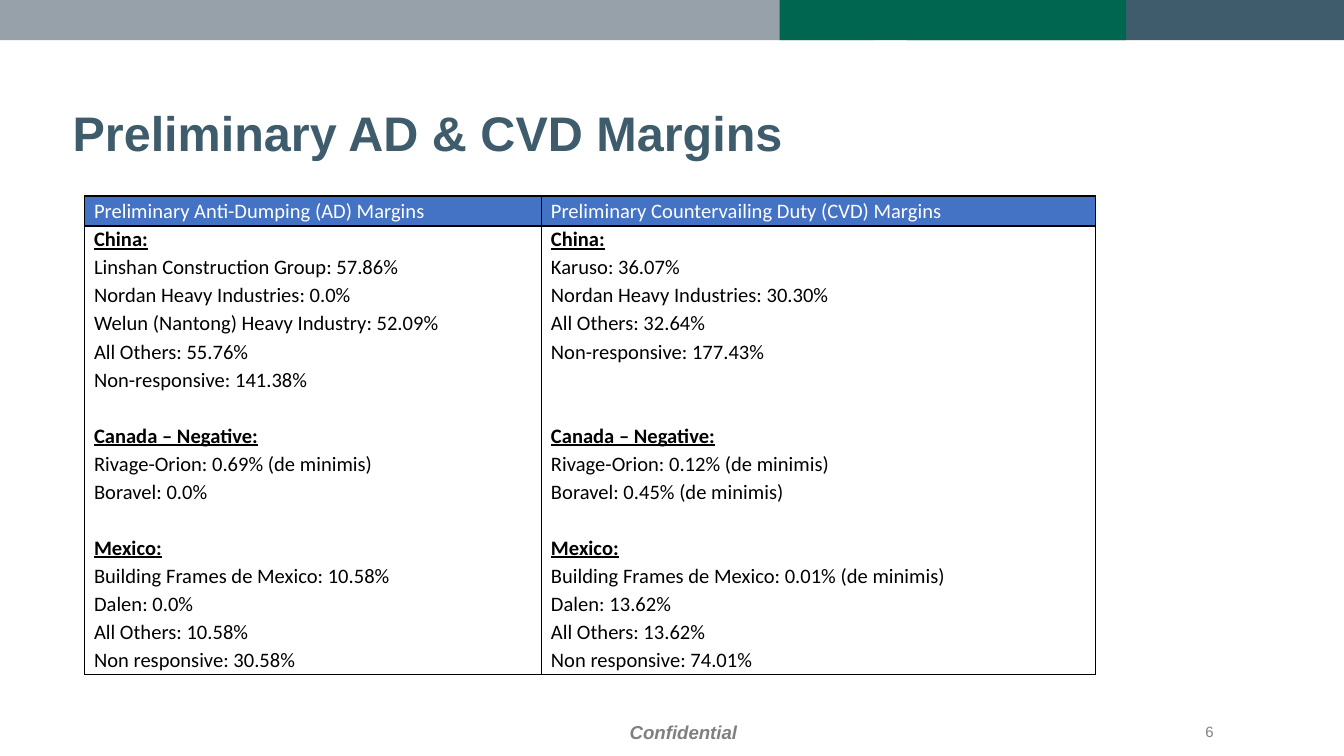
import itertools
import pptx
import pptx.util
import pptx.dml.color
import pptx.enum.shapes
import pptx.enum.text
import pptx.oxml
import pptx.oxml.ns

Inches, Pt = pptx.util.Inches, pptx.util.Pt
ALIGN, ANCHOR = pptx.enum.text.PP_ALIGN, pptx.enum.text.MSO_ANCHOR

TITLE = "Preliminary AD & CVD Margins"
HEADINGS = ("Preliminary Anti-Dumping (AD) Margins", "Preliminary Countervailing Duty (CVD) Margins")
COUNTRIES = [
    ("China:",
     ["Linshan Construction Group: 57.86%", "Nordan Heavy Industries: 0.0%",
      "Welun (Nantong) Heavy Industry: 52.09%", "All Others: 55.76%", "Non-responsive: 141.38%"],
     ["Karuso: 36.07%", "Nordan Heavy Industries: 30.30%", "All Others: 32.64%",
      "Non-responsive: 177.43%"]),
    ("Canada – Negative:",
     ["Rivage-Orion: 0.69% (de minimis)", "Boravel: 0.0%"],
     ["Rivage-Orion: 0.12% (de minimis)", "Boravel: 0.45% (de minimis)"]),
    ("Mexico:",
     ["Building Frames de Mexico: 10.58%", "Dalen: 0.0%", "All Others: 10.58%",
      "Non responsive: 30.58%"],
     ["Building Frames de Mexico: 0.01% (de minimis)", "Dalen: 13.62%", "All Others: 13.62%",
      "Non responsive: 74.01%"]),
]
BANDS = [(6.75, 3.25, "3F5C6C"), (0, 6.5, "97A1AA"), (5.8, 2.58, "00664F")]
FOOTERS = [
    ("6", (8.08, 5.31, 1, 0.27), ALIGN.RIGHT, {"size": Pt(8)}),
    ("Confidential", (2.25, 5.31, 5.67, 0.27), ALIGN.CENTER,
     {"size": Pt(10), "bold": True, "italic": True}),
]
SLIDE_WIDTH = 10
TABLE_BOX = (0.63, 1.46, 7.53, 3.56)
COLUMN_WIDTHS = (3.4, 4.12)
HEADING_HEIGHT = 0.22
BODY = {"name": "Calibri", "size": Pt(11)}
COUNTRY = {**BODY, "bold": True, "underline": True}


def paint(target, color):
    """Give a fill or a font a solid colour."""
    if hasattr(target, "solid"):
        target.solid()
        target.fore_color.rgb = pptx.dml.color.RGBColor.from_string(color)
    else:
        target.color.rgb = pptx.dml.color.RGBColor.from_string(color)


def write(paragraph, text, color, style):
    """Add one formatted run to a paragraph."""
    run = paragraph.add_run()
    run.text = text
    for key, value in style.items():
        setattr(run.font, key, value)
    paint(run.font, color)


def set_borders(cell, visible):
    """Draw the named cell sides as thin black lines and hide the others."""
    properties = cell._tc.get_or_add_tcPr()
    for index, side in enumerate("LRTB"):
        line = ('<a:solidFill><a:srgbClr val="000000"/></a:solidFill>'
                if side in visible else "<a:noFill/>")
        properties.insert(index, pptx.oxml.parse_xml(
            f'<a:ln{side} {pptx.oxml.ns.nsdecls("a")} w="12700">{line}</a:ln{side}>'))


def table_rows():
    """List the rows as (texts, style, colour), with a gap between countries."""
    rows = [(HEADINGS, BODY, "FFFFFF")]
    for index, (country, anti_dumping, countervailing) in enumerate(COUNTRIES):
        if index:
            rows.append((("", ""), BODY, "000000"))
        rows.append(((country, country), COUNTRY, "000000"))
        for pair in itertools.zip_longest(anti_dumping, countervailing, fillvalue=""):
            rows.append((pair, BODY, "000000"))
    return rows


def add_margins_table(slide):
    """Add the table of margins by country."""
    rows = table_rows()
    last = len(rows) - 1
    table = slide.shapes.add_table(len(rows), 2, *map(Inches, TABLE_BOX)).table
    table.horz_banding = False
    for column, width in zip(table.columns, COLUMN_WIDTHS):
        column.width = Inches(width)
    for index, (texts, style, color) in enumerate(rows):
        height = (TABLE_BOX[3] - HEADING_HEIGHT) / last if index else HEADING_HEIGHT
        table.rows[index].height = Inches(height)
        sides = "LR" + ("T" if index < 2 else "") + ("B" if index in (0, last) else "")
        for column, text in enumerate(texts):
            cell = table.cell(index, column)
            cell.vertical_anchor = ANCHOR.MIDDLE
            cell.margin_left = cell.margin_right = Inches(0.07)
            cell.margin_top = cell.margin_bottom = 0
            if index:
                cell.fill.background()
            else:
                paint(cell.fill, "4472C4")
            set_borders(cell, sides)
            paragraph = cell.text_frame.paragraphs[0]
            if text:
                write(paragraph, text, color, style)
            else:
                paragraph._p.get_or_add_endParaRPr().set("sz", "1100")


def main():
    """Build the slide and save it."""
    deck = pptx.Presentation()
    deck.slide_width, deck.slide_height = Inches(SLIDE_WIDTH), Inches(SLIDE_WIDTH * 9 / 16)
    slide = deck.slides.add_slide(deck.slide_layouts[5])

    for left, width, color in BANDS:
        band = slide.shapes.add_shape(pptx.enum.shapes.MSO_SHAPE.RECTANGLE, Inches(left), 0,
                                      Inches(width), Inches(0.3))
        band.shadow.inherit = False
        paint(band.fill, color)
        band.line.fill.background()

    title = slide.shapes.title
    title.left, title.top, title.width, title.height = map(Inches, (0.44, 0.44, 9.08, 0.81))
    title.text_frame.auto_size = pptx.enum.text.MSO_AUTO_SIZE.NONE
    title.text_frame.vertical_anchor = ANCHOR.BOTTOM
    heading = title.text_frame.paragraphs[0]
    heading.alignment = ALIGN.LEFT
    write(heading, TITLE, "3F5C6C", {"name": "Arial", "size": Pt(26), "bold": True})

    add_margins_table(slide)

    for text, box, alignment, style in FOOTERS:
        frame = slide.shapes.add_textbox(*map(Inches, box)).text_frame
        frame.word_wrap = True
        frame.vertical_anchor = ANCHOR.MIDDLE
        frame.margin_left = frame.margin_right = Inches(0.05)
        paragraph = frame.paragraphs[0]
        paragraph.alignment = alignment
        write(paragraph, text, "808080", {"name": "Arial", **style})

    deck.save("out.pptx")


if __name__ == "__main__":
    main()
